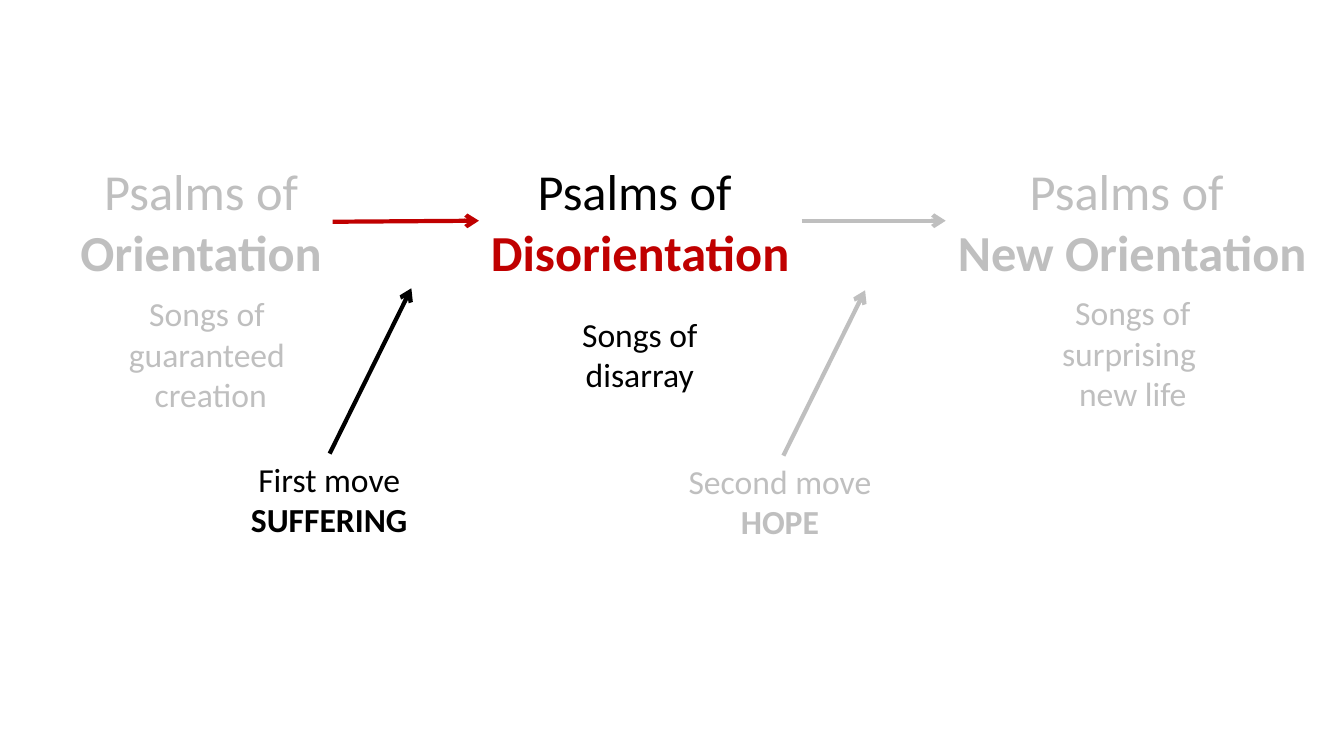
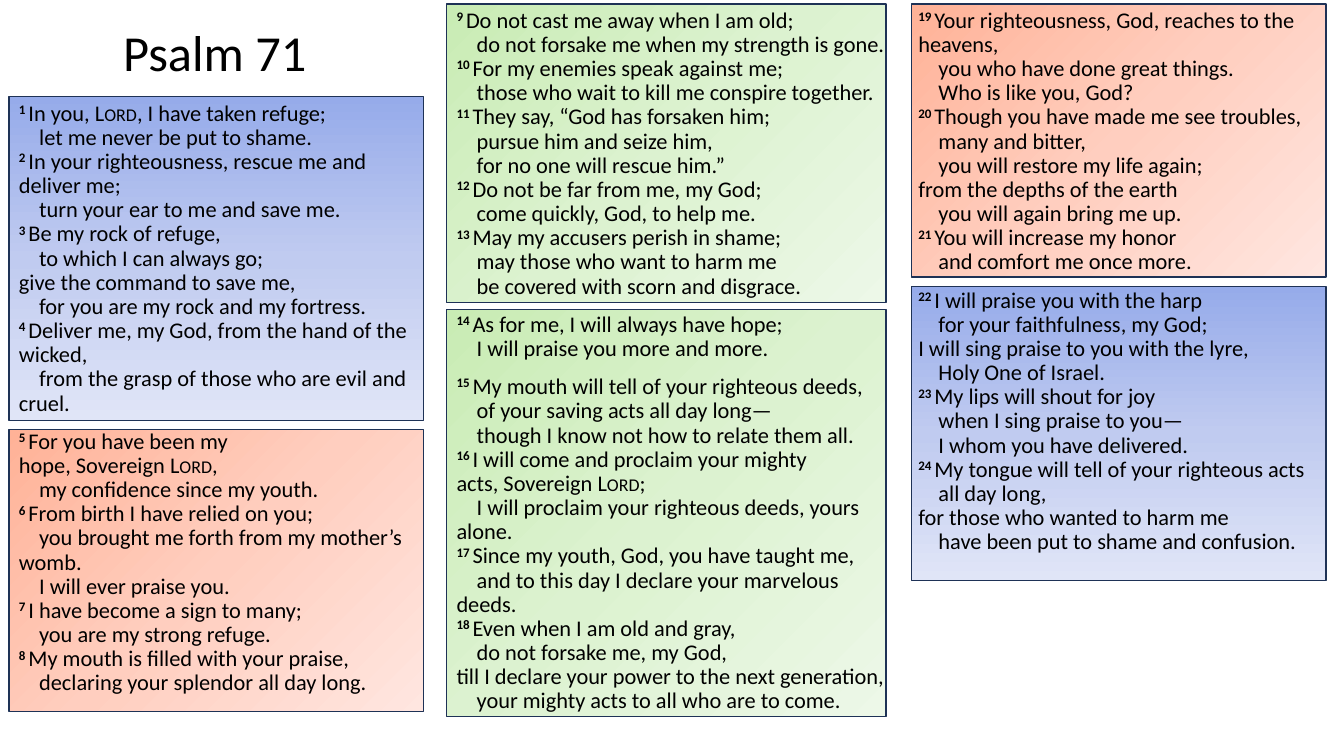
from copy import deepcopy
from dataclasses import dataclass

from lxml import etree
from pptx import Presentation
from pptx.dml.color import RGBColor
from pptx.enum.shapes import MSO_CONNECTOR, MSO_SHAPE
from pptx.enum.text import MSO_ANCHOR, MSO_AUTO_SIZE, PP_ALIGN
from pptx.oxml.ns import qn
from pptx.util import Inches, Pt

STRAIGHT = MSO_CONNECTOR.STRAIGHT
RECTANGLE = MSO_SHAPE.RECTANGLE
CENTER, LEFT = PP_ALIGN.CENTER, PP_ALIGN.LEFT
TOP = MSO_ANCHOR.TOP
GROW, FIXED = MSO_AUTO_SIZE.SHAPE_TO_FIT_TEXT, MSO_AUTO_SIZE.NONE

FONT = "Calibri"
HEADING, CAPTION, VERSE = 36, 24, 16
COLORS = {"active": "000000", "faded": "BFBFBF", "accent": "C00000", "border": "1E3256"}
TITLE_ONLY, BLANK = 5, 6
VERSE_INDENT = Inches(0.2)


@dataclass(frozen=True)
class Label:
    left: float
    top: float
    width: float
    height: float
    lines: tuple[str, ...]
    size: int
    color: str
    strong: str = ""  # colour of a bold last line
    wrap: bool = True


@dataclass(frozen=True)
class Arrow:
    start: tuple[float, float]
    end: tuple[float, float]
    color: str


@dataclass(frozen=True)
class Theme:
    stops: tuple[str, str, str]
    angle: int  # clockwise


@dataclass(frozen=True)
class Panel:
    left: float
    top: float
    width: float
    height: float
    theme: Theme


@dataclass(frozen=True)
class Column:
    left: float
    top: float
    width: float
    height: float
    stanzas: tuple[str, ...]


# Psalm movement: headings, captions and moves
LABELS = (
    Label(0.68, 1.54, 2.63, 1.31, ("Psalms of", "Orientation"), HEADING, "faded", "faded", False),
    Label(4.75, 1.54, 3.2, 1.31, ("Psalms of ", "Disorientation"), HEADING, "active", "accent", False),
    Label(9.38, 1.54, 3.7, 1.31, ("Psalms of ", "New Orientation"), HEADING, "faded", "faded", False),
    Label(1.17, 2.86, 1.84, 1.31, ("Songs of ", "guaranteed ", "creation"), CAPTION, "faded", wrap=False),
    Label(4.95, 3.06, 2.79, 0.91, ("Songs of", "disarray"), CAPTION, "active"),
    Label(9.71, 2.85, 3.05, 1.31, ("Songs of", "surprising ", "new life"), CAPTION, "faded"),
    Label(1.87, 4.5, 2.79, 0.91, ("First move", "SUFFERING"), CAPTION, "active", "active"),
    Label(6.34, 4.52, 2.79, 0.91, ("Second move", "HOPE"), CAPTION, "faded", "faded"),
)
ARROWS = (
    Arrow((3.3, 2.2), (4.75, 2.19), "accent"),
    Arrow((7.95, 2.19), (9.38, 2.19), "faded"),
    Arrow((3.27, 4.5), (4.08, 2.86), "active"),
    Arrow((7.77, 4.52), (8.58, 2.88), "faded"),
)

# Psalm 71: coloured sections
BLUE = Theme(("96ABEA", "C0CBF0", "E0E5F7"), 90)
ORANGE = Theme(("FFB297", "FFCEBF", "FFE6E0"), 45)
GREEN = Theme(("C9ECB4", "DCF2D0", "EDF8E8"), 45)
PANELS = (
    Panel(0.09, 0.96, 4.11, 3.21, BLUE),
    Panel(0.09, 4.26, 4.11, 2.8, ORANGE),
    Panel(4.43, 0.04, 4.36, 2.96, GREEN),
    Panel(4.43, 3.07, 4.36, 4.04, GREEN),
    Panel(9.04, 0.04, 4.11, 2.71, ORANGE),
    Panel(9.04, 2.84, 4.11, 2.92, BLUE),
)

# Verse text: a leading number opens a verse, ">" indents, "~" is a no-break space
COLUMNS = (
    Column(0.09, 0.96, 4.23, 6.29, (
        """1 In you,~Lord, I have taken refuge;
>let me never be put to shame.
2 In your righteousness, rescue me and deliver me;
>turn your ear~to me and save me.
3 Be my rock of refuge,
>to which I can always go;
give the command to save me,
>for you are my rock and my fortress.
4 Deliver~me, my God, from the hand of the wicked,
>from the grasp of those who are evil and cruel.""",
        """5 For you have been my hope,~Sovereign~Lord,
>my confidence~since my youth.
6 From birth~I have relied on you;
>you brought me forth from my mother’s womb.
>I will ever praise~you.
7 I have become a sign~to many;
>you are my strong refuge.
8 My mouth~is filled with your praise,
>declaring your splendor~all day long.""",
    )),
    Column(4.43, 0.04, 4.47, 7.46, (
        """9 Do not cast~me away when I am old;
>do not forsake~me when my strength is gone.
10 For my enemies~speak against me;
>those who wait to kill~me conspire~together.
11 They say, “God has forsaken~him;
>pursue him and seize him,
>for no one will rescue~him.”
12 Do not be far~from me, my God;
>come quickly, God, to help~me.
13 May my accusers~perish in shame;
>may those who want to harm me
>be covered with scorn and disgrace.""",
        """14 As for me, I will always have hope;
>I will praise you more and more.""",
        """15 My mouth will tell~of your righteous deeds,
>of your saving acts all day long—
>though I know not how to relate them all.
16 I will come and proclaim your mighty acts,~Sovereign~Lord;
>I will proclaim your righteous deeds, yours alone.
17 Since my youth, God, you have taught~me,
>and to this day I declare your marvelous deeds.
18 Even when I am old and gray,
>do not forsake me, my God,
till I declare your power~to the next generation,
>your mighty acts to all who are to come.""",
    )),
    Column(9.01, 0.04, 4.47, 7.46, (
        """19 Your righteousness, God, reaches to the heavens,
>you who have done great things.
>Who is like you, God?
20 Though you have made me see troubles,
>many and bitter,
>you will restore~my life again;
from the depths of the earth
>you will again bring me up.
21 You will increase my honor
>and comfort~me once more.""",
        """22 I will praise you with the harp
>for your faithfulness, my God;
I will sing praise to you with the lyre,
>Holy One of Israel.
23 My lips will shout for joy
>when I sing praise to you—
>I whom you have delivered.
24 My tongue will tell of your righteous acts
>all day long,
for those who wanted to harm me
>have been put to shame and confusion.""",
    )),
)


def rgb(name: str) -> RGBColor:
    return RGBColor.from_string(COLORS[name])


def box(item) -> tuple:
    return tuple(Inches(v) for v in (item.left, item.top, item.width, item.height))


def set_font(paragraph, size: int, color: str) -> None:
    paragraph.font.name = FONT
    paragraph.font.size = Pt(size)
    paragraph.font.color.rgb = rgb(color)


def add_run(paragraph, text: str, **attributes: str):
    run = paragraph.add_run()
    run.text = text.replace("~", chr(160))
    for key, value in attributes.items():
        run.font._element.set(key, value)
    return run


def draw_label(slide, label: Label) -> None:
    frame = slide.shapes.add_textbox(*box(label)).text_frame
    frame.word_wrap = label.wrap
    frame.auto_size = GROW
    paragraph = frame.paragraphs[0]
    paragraph.alignment = CENTER
    set_font(paragraph, label.size, label.color)
    for index, line in enumerate(label.lines):
        if index:
            paragraph.add_line_break()
        run = add_run(paragraph, line)
    if label.strong:
        run.font.bold = True
        run.font.color.rgb = rgb(label.strong)


def draw_arrow(slide, arrow: Arrow) -> None:
    ends = (Inches(v) for v in arrow.start + arrow.end)
    connector = slide.shapes.add_connector(STRAIGHT, *ends)
    connector.line.color.rgb = rgb(arrow.color)
    connector.line.width = Pt(3)
    properties = connector._element.spPr
    etree.SubElement(properties.find(qn("a:ln")), qn("a:tailEnd"), type="arrow")
    etree.SubElement(properties, qn("a:effectLst"))


def draw_panel(slide, panel: Panel) -> None:
    section = slide.shapes.add_shape(RECTANGLE, *box(panel))
    section.shadow.inherit = False
    section.line.color.rgb = rgb("border")
    section.line.width = Pt(1)
    section.fill.gradient()
    section.fill.gradient_angle = 360 - panel.theme.angle
    # The default gradient has two stops; put a third halfway
    first = section._element.spPr.find(".//" + qn("a:gs"))
    middle = deepcopy(first)
    middle.set("pos", "50000")
    first.addnext(middle)
    for stop, color in zip(section.fill.gradient_stops, panel.theme.stops):
        stop.color.rgb = RGBColor.from_string(color)


def write_verse_line(paragraph, line: str, space_before: int) -> None:
    set_font(paragraph, VERSE, "active")
    paragraph.line_spacing = 0.9
    paragraph.space_before = Pt(space_before)
    if line.startswith(">"):
        paragraph._p.get_or_add_pPr().set("indent", str(VERSE_INDENT))
        line = line[1:]
    elif line[0].isdigit():
        number, _, line = line.partition(" ")
        add_run(paragraph, number + "~", b="1", baseline="30000")
    before, divine_name, after = line.partition("Lord")
    add_run(paragraph, before)
    if divine_name:
        add_run(paragraph, divine_name, cap="small")
        add_run(paragraph, after)


def draw_column(slide, column: Column) -> None:
    frame = slide.shapes.add_textbox(*box(column)).text_frame
    frame.word_wrap = True
    paragraph = frame.paragraphs[0]
    for stanza_index, stanza in enumerate(column.stanzas):
        for line_index, line in enumerate(stanza.splitlines()):
            if stanza_index or line_index:
                paragraph = frame.add_paragraph()
            opens_stanza = stanza_index > 0 and line_index == 0
            write_verse_line(paragraph, line, 10 if opens_stanza else 0)


def draw_title(slide, text: str) -> None:
    title = slide.shapes.title
    title.left, title.top = Inches(1.12), Inches(0.16)
    title.width, title.height = Inches(2.04), Inches(0.71)
    frame = title.text_frame
    frame.text = text
    frame.word_wrap = False
    frame.auto_size = FIXED
    frame.vertical_anchor = TOP
    frame.paragraphs[0].alignment = LEFT
    set_font(frame.paragraphs[0], HEADING, "active")


def main() -> None:
    deck = Presentation()
    deck.slide_width, deck.slide_height = Inches(13.33), Inches(7.5)

    movement = deck.slides.add_slide(deck.slide_layouts[BLANK])
    for label in LABELS:
        draw_label(movement, label)
    for arrow in ARROWS:
        draw_arrow(movement, arrow)

    psalm = deck.slides.add_slide(deck.slide_layouts[TITLE_ONLY])
    draw_title(psalm, "Psalm 71")
    for panel in PANELS:
        draw_panel(psalm, panel)
    for column in COLUMNS:
        draw_column(psalm, column)

    deck.save("out.pptx")


if __name__ == "__main__":
    main()
